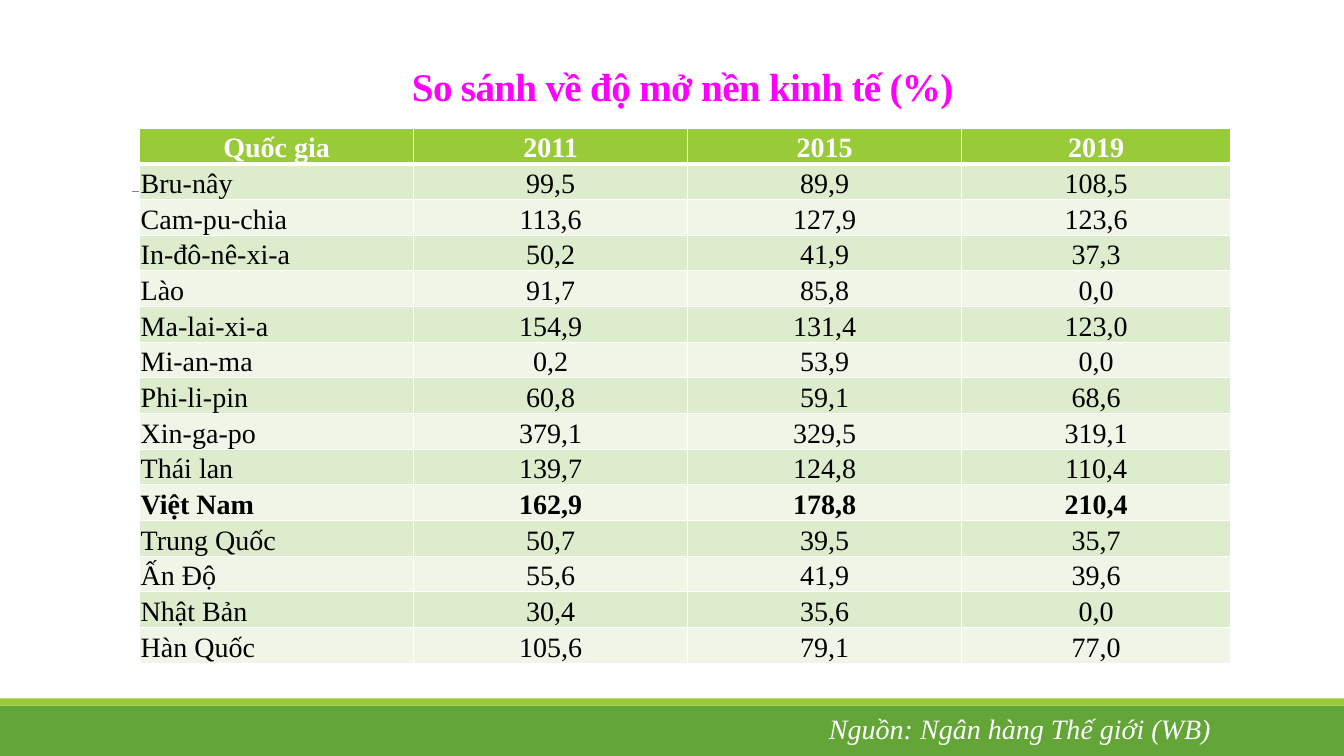
from lxml.etree import SubElement
from pptx import Presentation
from pptx.dml.color import RGBColor
from pptx.enum.shapes import MSO_CONNECTOR, MSO_SHAPE
from pptx.enum.text import MSO_ANCHOR, MSO_AUTO_SIZE, PP_ALIGN
from pptx.oxml import parse_xml
from pptx.oxml.ns import nsdecls, qn
from pptx.util import Pt

PX = 9525
FONT = "Times New Roman"
WHITE = "FFFFFF"
LIME = "99CB38"
GREEN = "63A537"
BAND_FILLS = ("DEECCE", "EFF6E8")
HIGHLIGHT = "Việt Nam"
COLUMN_WIDTHS = (261, 261, 261, 256)
ROW_HEIGHT = 34

OPENNESS = [
    ("Quốc gia", "2011", "2015", "2019"),
    ("Bru-nây", "99,5", "89,9", "108,5"),
    ("Cam-pu-chia", "113,6", "127,9", "123,6"),
    ("In-đô-nê-xi-a", "50,2", "41,9", "37,3"),
    ("Lào", "91,7", "85,8", "0,0"),
    ("Ma-lai-xi-a", "154,9", "131,4", "123,0"),
    ("Mi-an-ma", "0,2", "53,9", "0,0"),
    ("Phi-li-pin", "60,8", "59,1", "68,6"),
    ("Xin-ga-po", "379,1", "329,5", "319,1"),
    ("Thái lan", "139,7", "124,8", "110,4"),
    (HIGHLIGHT, "162,9", "178,8", "210,4"),
    ("Trung Quốc", "50,7", "39,5", "35,7"),
    ("Ấn Độ", "55,6", "41,9", "39,6"),
    ("Nhật Bản", "30,4", "35,6", "0,0"),
    ("Hàn Quốc", "105,6", "79,1", "77,0"),
]


def px(*lengths):
    return [length * PX for length in lengths]


def rgb(color):
    return RGBColor.from_string(color)


def write(frame, text, size=20, color="000000", bold=False, italic=False,
          align=PP_ALIGN.LEFT, line_spacing=None, tracking=None):
    paragraph = frame.paragraphs[0]
    paragraph.alignment = align
    if line_spacing:
        paragraph.line_spacing = line_spacing
    run = paragraph.add_run()
    run.text = text
    run.font.name = FONT
    run.font.size = Pt(size)
    run.font.bold = bold
    run.font.italic = italic
    run.font.color.rgb = rgb(color)
    if tracking is not None:
        run.font._element.set("spc", str(round(tracking * 100)))


def add_bar(slide, left, top, width, height, color):
    bar = slide.shapes.add_shape(MSO_SHAPE.RECTANGLE, *px(left, top, width, height))
    bar.shadow.inherit = False
    bar.fill.solid()
    bar.fill.fore_color.rgb = rgb(color)
    bar.line.fill.background()


def add_rule(slide, left, right, y):
    rule = slide.shapes.add_connector(MSO_CONNECTOR.STRAIGHT, *px(left, y, right, y))
    rule.line.color.rgb = rgb("808080")
    rule.line.width = Pt(0.5)
    SubElement(rule._element.spPr, qn("a:effectLst"))


def set_title(slide, text):
    title = slide.shapes.title
    title.left, title.top, title.width, title.height = px(93, 27, 1114, 82)
    title.fill.solid()
    title.fill.fore_color.rgb = rgb(WHITE)
    title.text_frame.auto_size = MSO_AUTO_SIZE.NONE
    title.text_frame.vertical_anchor = MSO_ANCHOR.BOTTOM
    write(title.text_frame, text, size=28, color="FF00FF", bold=True,
          align=PP_ALIGN.CENTER, line_spacing=1.5, tracking=-0.5)


def set_borders(cell, top=1, bottom=1):
    properties = cell._tc.get_or_add_tcPr()
    widths = (("lnL", 1), ("lnR", 1), ("lnT", top), ("lnB", bottom))
    for position, (side, width) in enumerate(widths):
        properties.insert(position, parse_xml(
            f'<a:{side} {nsdecls("a")} w="{Pt(width)}"><a:solidFill>'
            f'<a:srgbClr val="{WHITE}"/></a:solidFill></a:{side}>'))


def fill_cell(cell, text, row, column, bold):
    header = row == 0
    cell.fill.solid()
    cell.fill.fore_color.rgb = rgb(LIME if header else BAND_FILLS[(row - 1) % 2])
    cell.vertical_anchor = MSO_ANCHOR.BOTTOM
    cell.margin_left = cell.margin_right = cell.margin_top = PX
    cell.margin_bottom = 0
    set_borders(cell, top=3 if row == 1 else 1, bottom=3 if header else 1)
    write(cell.text_frame, text, color=WHITE if header else "000000", bold=bold,
          align=PP_ALIGN.CENTER if header or column else PP_ALIGN.LEFT)


def add_openness_table(slide, left, top):
    size = px(sum(COLUMN_WIDTHS), ROW_HEIGHT * len(OPENNESS))
    table = slide.shapes.add_table(
        len(OPENNESS), len(COLUMN_WIDTHS), *px(left, top), *size).table
    for column, width in zip(table.columns, COLUMN_WIDTHS):
        column.width = width * PX
    for row, record in enumerate(OPENNESS):
        table.rows[row].height = ROW_HEIGHT * PX
        bold = row == 0 or record[0] == HIGHLIGHT
        for column, text in enumerate(record):
            fill_cell(table.cell(row, column), text, row, column, bold)


def add_source(slide, text):
    source = slide.shapes.add_textbox(*px(780, 673, 386, 42))
    source.text_frame.word_wrap = False
    source.text_frame.auto_size = MSO_AUTO_SIZE.SHAPE_TO_FIT_TEXT
    write(source.text_frame, text, color=WHITE, italic=True)


def main():
    deck = Presentation()
    deck.slide_width, deck.slide_height = px(1280, 720)
    slide = deck.slides.add_slide(deck.slide_layouts[5])
    add_bar(slide, 0, 672, 1280, 48, GREEN)
    add_bar(slide, 0, 665, 1280, 7, LIME)
    add_rule(slide, 126, 1172, 182)
    set_title(slide, "So sánh về độ mở nền kinh tế (%)")
    add_openness_table(slide, 133, 122)
    add_source(slide, "Nguồn: Ngân hàng Thế giới (WB)")
    deck.save("out.pptx")


if __name__ == "__main__":
    main()
